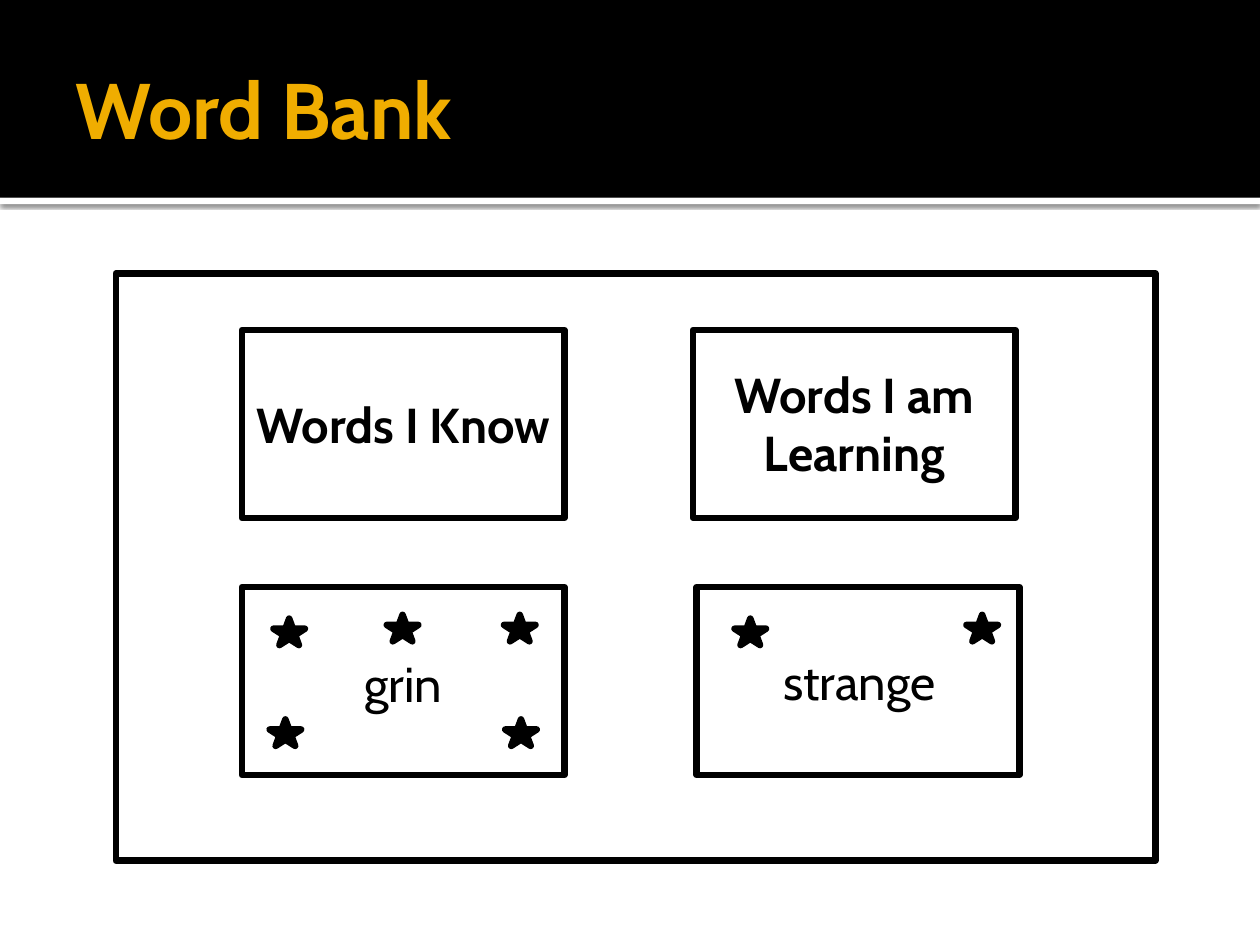
"""Build the Word Bank slide with its sorting cards and progress stars."""
from lxml import etree
from pptx import Presentation
from pptx.dml.color import RGBColor as RGB
from pptx.enum.shapes import MSO_SHAPE as SHAPE
from pptx.enum.text import MSO_ANCHOR as ANCHOR, MSO_AUTO_SIZE as AUTO, PP_ALIGN as ALIGN
from pptx.oxml.ns import qn
from pptx.util import Inches, Pt

COLORS = {"black": "000000", "white": "FFFFFF", "gold": "F0AD00"}
CARD_W, CARD_H = 2.56, 1.49
STAR_W, STAR_H = 0.25, 0.21
CARDS = [
    ("Words I Know", True, (1.92, 2.62), (1.92, 3.08), 0.57),
    ("Words I am Learning", True, (5.5, 2.62), (5.5, 2.84), 1.04),
    ("grin", False, (1.92, 4.66), (1.92, 5.14), 0.57),
    ("strange", False, (5.53, 4.66), (5.54, 5.12), 0.57),
]
STARS = [(2.17, 4.91), (3.07, 4.88), (4, 4.88), (4.01, 5.71), (2.14, 5.71),
         (5.83, 4.91), (7.67, 4.88)]


def write(tf, text, size=28, color="black", bold=False, align=ALIGN.CENTER, font="Cabin"):
    p = tf.paragraphs[0]
    p.alignment = align
    r = p.add_run()
    r.text = text
    r.font.name, r.font.size, r.font.bold = font, Pt(size), bold
    r.font.color.rgb = RGB.from_string(COLORS[color])


class Board:
    def __init__(self, slide, line_width=3.78):
        self.s = slide
        self.line_width = line_width

    def shape(self, x, y, w, h, kind=SHAPE.RECTANGLE, fill=None, line="black"):
        sp = self.s.shapes.add_shape(kind, Inches(x), Inches(y), Inches(w), Inches(h))
        sp.shadow.inherit = False
        if fill:
            sp.fill.solid()
            sp.fill.fore_color.rgb = RGB.from_string(COLORS[fill])
        else:
            sp.fill.background()
        if line:
            sp.line.color.rgb = RGB.from_string(COLORS[line])
            sp.line.width = Pt(self.line_width)
        else:
            sp.line.fill.background()
        return sp

    def header(self, height=1.57):
        strip = self.shape(0, height, 10, 0.05, fill="white", line=None)
        effects = strip.element.spPr.find(qn("a:effectLst"))
        shadow = etree.SubElement(effects, qn("a:outerShdw"), blurRad=str(Pt(2.5)),
                                  dist=str(Pt(0.8)), dir="5400000", rotWithShape="0")
        color = etree.SubElement(shadow, qn("a:srgbClr"), val=COLORS["black"])
        etree.SubElement(color, qn("a:alpha"), val="60000")
        band = self.shape(0, 0, 10, height, fill="black", line=None)
        for sp in (strip, band):
            self.s.shapes.title.element.addprevious(sp.element)

    def title(self, text):
        sp = self.s.shapes.title
        sp.left, sp.top, sp.width, sp.height = (Inches(v) for v in (0.5, 0.17, 9, 1.37))
        tf = sp.text_frame
        tf.auto_size, tf.vertical_anchor = AUTO.NONE, ANCHOR.MIDDLE
        tf.margin_left = Inches(0.1)
        tf.margin_right = tf.margin_top = tf.margin_bottom = Inches(0.05)
        write(tf, text, size=45, color="gold", bold=True, align=ALIGN.LEFT)

    def label(self, text, x, y, w, h, **fmt):
        sp = self.s.shapes.add_textbox(Inches(x), Inches(y), Inches(w), Inches(h))
        tf = sp.text_frame
        tf.word_wrap, tf.auto_size = True, AUTO.SHAPE_TO_FIT_TEXT
        write(tf, text, **fmt)

    def card(self, text, bold, corner, label_corner, label_h):
        self.shape(*corner, CARD_W, CARD_H)
        self.label(text, *label_corner, CARD_W, label_h, bold=bold)

    def star(self, x, y):
        self.shape(x, y, STAR_W, STAR_H, kind=SHAPE.STAR_5_POINT, fill="black")


def main():
    prs = Presentation()
    prs.slide_width, prs.slide_height = Inches(10), Inches(7.5)
    board = Board(prs.slides.add_slide(prs.slide_layouts[5]))
    board.header()
    board.title("Word Bank")
    board.shape(0.92, 2.17, 8.25, 4.66)
    for card in CARDS:
        board.card(*card)
    for corner in STARS:
        board.star(*corner)
    prs.save("out.pptx")


if __name__ == "__main__":
    main()
